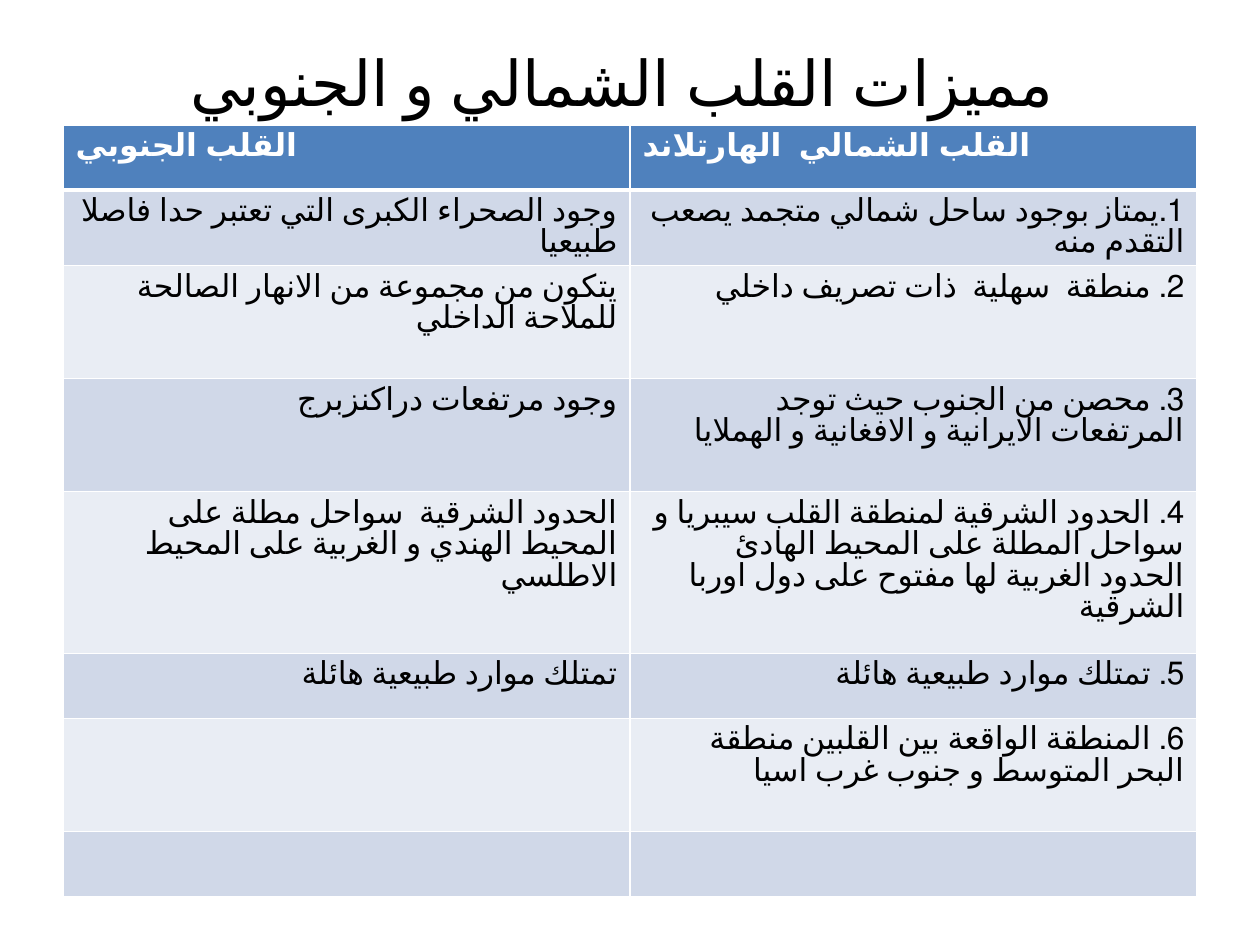
from lxml.etree import SubElement
from pptx import Presentation
from pptx.dml.color import RGBColor
from pptx.enum.lang import MSO_LANGUAGE_ID as Language
from pptx.enum.text import MSO_ANCHOR, PP_ALIGN
from pptx.oxml.ns import qn
from pptx.util import Cm, Pt

BLACK = RGBColor(0x00, 0x00, 0x00)
WHITE = RGBColor(0xFF, 0xFF, 0xFF)
HEADER_BLUE = RGBColor(0x4F, 0x81, 0xBD)
BAND_DARK = RGBColor(0xD0, 0xD8, 0xE8)
BAND_LIGHT = RGBColor(0xE9, 0xED, 0xF4)
FONT = "Calibri"

# Southern heartland, northern heartland
COMPARISON = [
    ("القلب الجنوبي", "القلب الشمالي  الهارتلاند"),
    ("وجود الصحراء الكبرى التي تعتبر حدا فاصلا طبيعيا ",
     "1.يمتاز بوجود ساحل شمالي متجمد يصعب التقدم منه "),
    ("يتكون من مجموعة من الانهار الصالحة للملاحة الداخلي ",
     "2. منطقة  سهلية  ذات تصريف داخلي  "),
    ("وجود مرتفعات دراكنزبرج ",
     "3. محصن من الجنوب حيث توجد المرتفعات الايرانية و الافغانية و الهملايا "),
    ("الحدود الشرقية  سواحل مطلة على المحيط الهندي و الغربية على المحيط الاطلسي ",
     "4. الحدود الشرقية لمنطقة القلب سيبريا و سواحل المطلة على المحيط الهادئ "
     "الحدود الغربية لها مفتوح على دول اوربا الشرقية "),
    ("تمتلك موارد طبيعية هائلة ", "5. تمتلك موارد طبيعية هائلة "),
    ("", "6. المنطقة الواقعة بين القلبين منطقة البحر المتوسط و جنوب غرب اسيا "),
    ("", ""),
]
ROW_HEIGHTS = [1.31, 1.31, 2.28, 2.28, 3.26, 1.31, 2.28, 1.31]


def format_runs(paragraph, size, color, bold=False):
    for run in paragraph.runs:
        run.font.name = FONT
        run.font.size = Pt(size)
        run.font.bold = bold
        run.font.color.rgb = color
        run.font.language_id = Language.ARABIC


def add_border(cell, side, width):
    """Put a white border on one side, ahead of the cell's fill as the schema asks."""
    properties = cell._tc.get_or_add_tcPr()
    line = SubElement(properties, qn(f"a:{side}"), w=str(Pt(width)))
    fill = SubElement(line, qn("a:solidFill"))
    SubElement(fill, qn("a:srgbClr"), val=str(WHITE))
    properties.insert(0, line)


prs = Presentation()
prs.slide_width, prs.slide_height = Cm(25.4), Cm(19.05)
slide = prs.slides.add_slide(prs.slide_layouts[5])

title = slide.shapes.title
title.left, title.top, title.width, title.height = Cm(1.27), Cm(0.76), Cm(22.86), Cm(1.75)
title.text_frame.text = "مميزات القلب الشمالي و الجنوبي "
title.text_frame.vertical_anchor = MSO_ANCHOR.MIDDLE
heading = title.text_frame.paragraphs[0]
heading.alignment = PP_ALIGN.CENTER
format_runs(heading, 36, BLACK)

table = slide.shapes.add_table(
    len(COMPARISON), 2, Cm(1.27), Cm(2.52), Cm(22.86), Cm(sum(ROW_HEIGHTS))
).table

for row, (features, height) in enumerate(zip(COMPARISON, ROW_HEIGHTS)):
    table.rows[row].height = Cm(height)
    is_header = row == 0
    band = HEADER_BLUE if is_header else BAND_DARK if row % 2 else BAND_LIGHT
    for column, feature in enumerate(features):
        cell = table.cell(row, column)
        cell.fill.solid()
        cell.fill.fore_color.rgb = band
        cell.text_frame.text = feature
        paragraph = cell.text_frame.paragraphs[0]
        if is_header:
            add_border(cell, "lnB", 3)
        else:
            paragraph.alignment = PP_ALIGN.RIGHT
            paragraph._p.get_or_add_pPr().set("rtl", "1")
        format_runs(paragraph, 18, WHITE if is_header else BLACK, bold=is_header)

prs.save("out.pptx")
